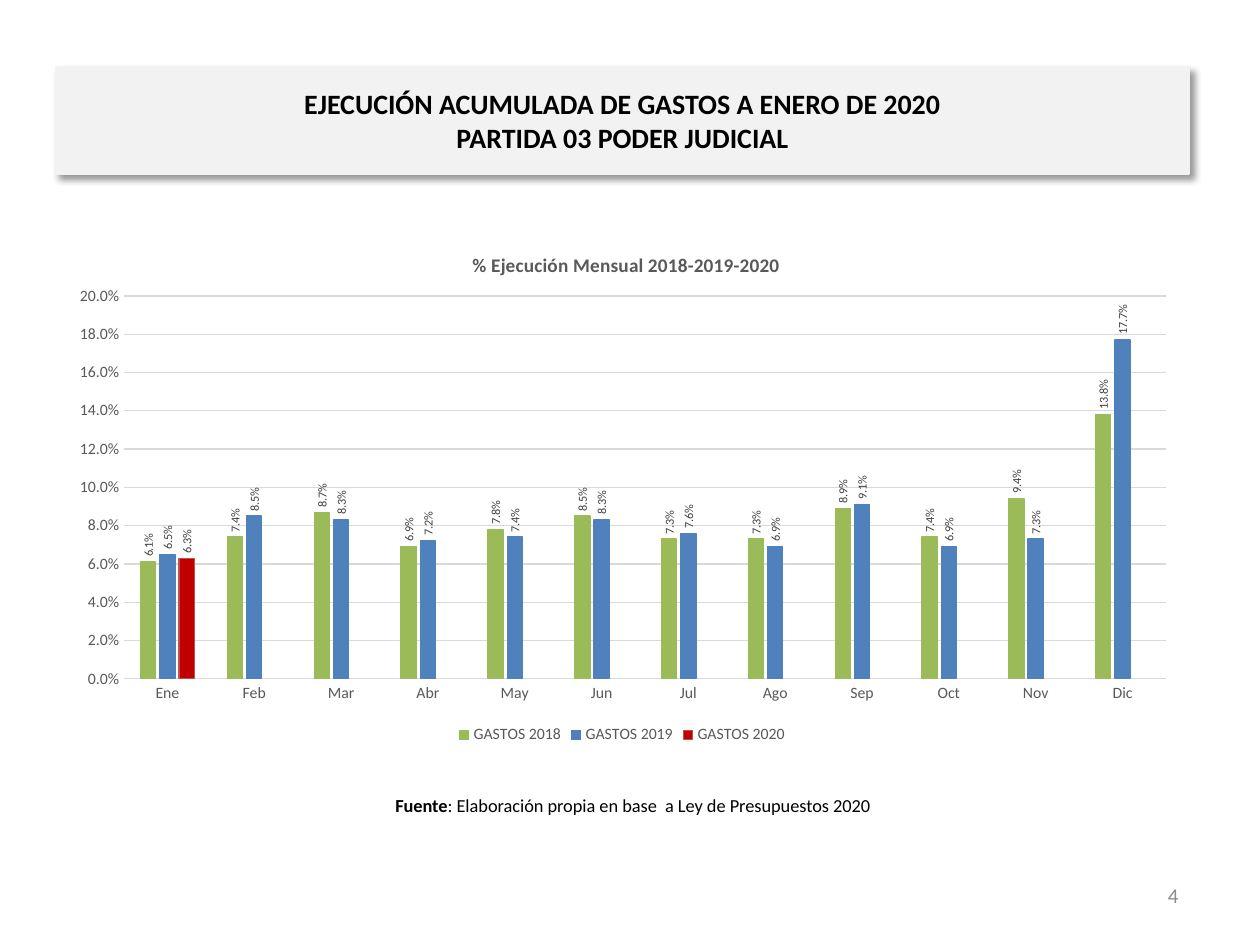
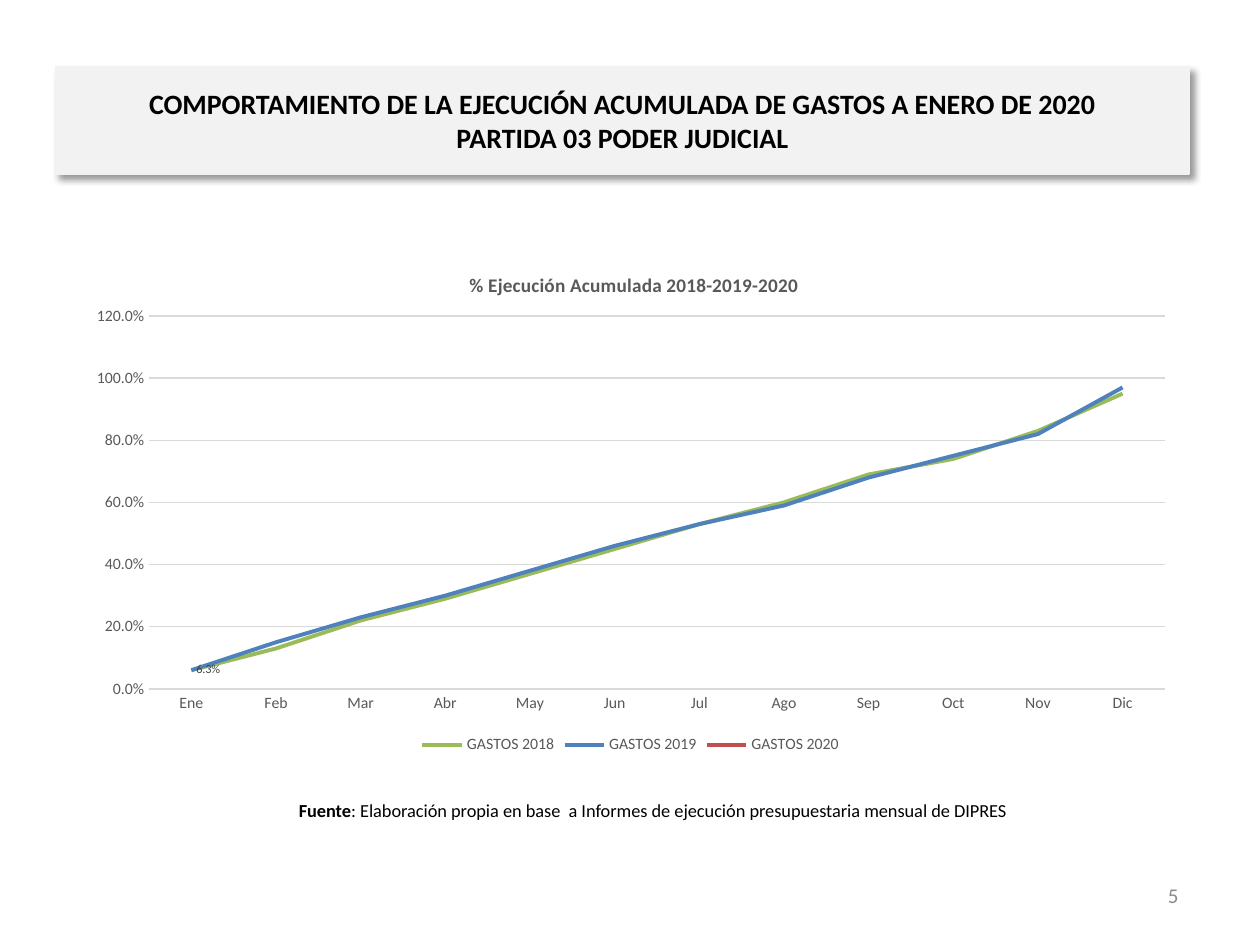
from lxml import etree
from pptx import Presentation
from pptx.chart.data import CategoryChartData
from pptx.dml.color import RGBColor
from pptx.enum.chart import XL_CHART_TYPE as ChartType
from pptx.enum.chart import XL_LABEL_POSITION as LabelPosition
from pptx.enum.chart import XL_LEGEND_POSITION as LegendPosition
from pptx.enum.chart import XL_MARKER_STYLE as MarkerStyle
from pptx.enum.chart import XL_TICK_MARK as TickMark
from pptx.enum.shapes import MSO_SHAPE as Shape
from pptx.enum.text import MSO_ANCHOR as Anchor
from pptx.enum.text import PP_ALIGN as Align
from pptx.oxml import parse_xml
from pptx.oxml.ns import qn
from pptx.util import Pt

EMU_PER_PX = 914400 / 126
FONT = "Calibri"
BLACK, BAND, GRID = "000000", "F2F2F2", "D9D9D9"
GREY_TEXT, LABEL_TEXT, NUMBER_TEXT = "595959", "404040", "8C8C8C"
GREEN, BLUE, RED, DARK_RED = "9BBB59", "4F81BD", "C0504D", "C00000"

PAGE_SIZE = (1260, 945)
BAND_PLACE = (56, 67, 1133, 107)
NUMBER_PLACE = (897, 870, 294, 50)
TITLE_DROP = 24
PERCENT = "0.0%"

MONTHS = ["Ene", "Feb", "Mar", "Abr", "May", "Jun",
          "Jul", "Ago", "Sep", "Oct", "Nov", "Dic"]
SERIES_NAMES = ["GASTOS 2018", "GASTOS 2019", "GASTOS 2020"]
SUBTITLE = "PARTIDA 03 PODER JUDICIAL"

# Places are left, top, width, height in px.
PAGES = [
    {
        "number": "4",
        "title": "EJECUCIÓN ACUMULADA DE GASTOS A ENERO DE 2020",
        "source": ": Elaboración propia en base  a Ley de Presupuestos 2020",
        "source_place": (54, 780, 1158, 50),
        "type": ChartType.COLUMN_CLUSTERED,
        "chart_title": "% Ejecución Mensual 2018-2019-2020",
        "chart_title_left": 469,
        "chart_place": (56, 224, 1132, 525),
        "plot_place": (124, 296, 1042, 383),
        "scale": (0.2, 0.02),
        "values": [
            [0.061, 0.074, 0.087, 0.069, 0.078, 0.085,
             0.073, 0.073, 0.089, 0.074, 0.094, 0.138],
            [0.065, 0.085, 0.083, 0.072, 0.074, 0.083,
             0.076, 0.069, 0.091, 0.069, 0.073, 0.177],
            [0.063],
        ],
    },
    {
        "number": "5",
        "title": "COMPORTAMIENTO DE LA EJECUCIÓN ACUMULADA DE GASTOS A ENERO DE 2020",
        "source": ": Elaboración propia en base  a Informes de ejecución "
                  "presupuestaria mensual de DIPRES",
        "source_place": (74, 785, 1158, 50),
        "type": ChartType.LINE,
        "chart_title": "% Ejecución Acumulada 2018-2019-2020",
        "chart_title_left": 466,
        "chart_place": (74, 244, 1113, 515),
        "plot_place": (149, 316, 1016, 373),
        "scale": (1.2, 0.2),
        "values": [
            [0.06, 0.13, 0.22, 0.29, 0.37, 0.45, 0.53, 0.6, 0.69, 0.74, 0.83, 0.95],
            [0.06, 0.15, 0.23, 0.3, 0.38, 0.46, 0.53, 0.59, 0.68, 0.75, 0.82, 0.97],
            [0.063],
        ],
    },
]


def px(*lengths):
    return [round(length * EMU_PER_PX) for length in lengths]


def color(code):
    return RGBColor.from_string(code)


def set_font(font, size, code, bold=False):
    font.name, font.size, font.bold = FONT, Pt(size), bold
    font.color.rgb = color(code)


def set_line(line, code, width):
    line.color.rgb = color(code)
    line.width = Pt(width)


def add_span(para, text, size, code, bold=False):
    span = para.add_run()
    span.text = text
    set_font(span.font, size, code, bold)


def add_line_of_text(page, place, align):
    """Add a one-paragraph text box and return its paragraph."""
    frame = page.shapes.add_textbox(*px(*place)).text_frame
    frame.word_wrap = True
    frame.vertical_anchor = Anchor.MIDDLE
    para = frame.paragraphs[0]
    para.alignment = align
    return para


def add_band(page, title):
    band = page.shapes.add_shape(Shape.RECTANGLE, *px(*BAND_PLACE))
    band.fill.solid()
    band.fill.fore_color.rgb = color(BAND)
    set_line(band.line, BAND, 0.75)
    band.shadow.inherit = False
    effects = band._element.spPr.find(qn("a:effectLst"))
    shadow = etree.SubElement(effects, qn("a:outerShdw"), blurRad=str(Pt(4)),
                              dist=str(Pt(3)), dir="2700000", algn="tl", rotWithShape="0")
    tint = etree.SubElement(shadow, qn("a:srgbClr"), val=BLACK)
    etree.SubElement(tint, qn("a:alpha"), val="40000")
    frame = band.text_frame
    frame.word_wrap = True
    frame.vertical_anchor = Anchor.MIDDLE
    para = frame.paragraphs[0]
    para.alignment = Align.CENTER
    add_span(para, title, 16, BLACK, True)
    para.add_line_break()
    add_span(para, SUBTITLE, 16, BLACK, True)


def manual_layout(**settings):
    """Build a chart layout element from its settings, in schema order."""
    namespace = "http://schemas.openxmlformats.org/drawingml/2006/chart"
    parts = "".join(f'<c:{name} val="{value}"/>' for name, value in settings.items())
    return parse_xml(f'<c:layout xmlns:c="{namespace}"><c:manualLayout>{parts}'
                     "</c:manualLayout></c:layout>")


def drop_layout(element):
    for old in element.findall(qn("c:layout")):
        element.remove(old)


def place_chart_parts(chart, item):
    """Fix the chart title and the inner plot area inside the chart frame."""
    left, top, width, height = item["chart_place"]
    plot_left, plot_top, plot_width, plot_height = item["plot_place"]
    root = chart._chartSpace.find(qn("c:chart"))
    title = root.find(qn("c:title"))
    drop_layout(title)
    title.find(qn("c:tx")).addnext(manual_layout(
        xMode="edge", yMode="edge",
        x=(item["chart_title_left"] - left) / width, y=TITLE_DROP / height))
    plot_area = root.find(qn("c:plotArea"))
    drop_layout(plot_area)
    plot_area.insert(0, manual_layout(
        layoutTarget="inner", xMode="edge", yMode="edge",
        x=(plot_left - left) / width, y=(plot_top - top) / height,
        w=plot_width / width, h=plot_height / height))


def style_axes(chart, top_value, step):
    for axis in (chart.category_axis, chart.value_axis):
        axis.major_tick_mark = axis.minor_tick_mark = TickMark.NONE
        set_font(axis.tick_labels.font, 9, GREY_TEXT)
    set_line(chart.category_axis.format.line, GRID, 0.75)
    values = chart.value_axis
    values.minimum_scale, values.maximum_scale, values.major_unit = 0, top_value, step
    values.tick_labels.number_format = PERCENT
    values.tick_labels.number_format_is_linked = False
    values.format.line.fill.background()
    set_line(values.major_gridlines.format.line, GRID, 0.75)


def add_labels(series, position):
    labels = series.data_labels
    labels.show_value = True
    labels.number_format = PERCENT
    labels.number_format_is_linked = False
    labels.position = position
    set_font(labels.font, 7, LABEL_TEXT)
    return labels


def style_columns(plot):
    plot.gap_width, plot.overlap = 219, -27
    for series, fill, edge in zip(plot.series, (GREEN, BLUE, DARK_RED), (GREEN, BLUE, RED)):
        series.format.fill.solid()
        series.format.fill.fore_color.rgb = color(fill)
        set_line(series.format.line, edge, 0.75)
        labels = add_labels(series, LabelPosition.OUTSIDE_END)
        body = labels._element.find(qn("c:txPr")).find(qn("a:bodyPr"))
        body.set("rot", "-5400000")
        body.set("vert", "horz")


def style_lines(plot):
    for series, code in zip(plot.series, (GREEN, BLUE, RED)):
        series.smooth = False
        series.marker.style = MarkerStyle.NONE
        set_line(series.format.line, code, 2.25)
    add_labels(plot.series[-1], LabelPosition.RIGHT)


def add_chart(page, item):
    data = CategoryChartData(number_format=PERCENT)
    data.categories = MONTHS
    for name, values in zip(SERIES_NAMES, item["values"]):
        data.add_series(name, values + [None] * (len(MONTHS) - len(values)))
    chart = page.shapes.add_chart(item["type"], *px(*item["chart_place"]), data).chart
    set_font(chart.font, 10, BLACK)
    add_span(chart.chart_title.text_frame.paragraphs[0], item["chart_title"],
             11, GREY_TEXT, True)
    chart.chart_title.include_in_layout = False
    chart.has_legend = True
    chart.legend.position = LegendPosition.BOTTOM
    chart.legend.include_in_layout = False
    set_font(chart.legend.font, 9, GREY_TEXT)
    style_axes(chart, *item["scale"])
    plot = chart.plots[0]
    plot.vary_by_categories = False
    if item["type"] == ChartType.LINE:
        style_lines(plot)
    else:
        style_columns(plot)
    place_chart_parts(chart, item)


def add_page(deck, item):
    page = deck.slides.add_slide(deck.slide_layouts[6])
    number = add_line_of_text(page, NUMBER_PLACE, Align.RIGHT)
    add_span(number, item["number"], 12, NUMBER_TEXT)
    add_band(page, item["title"])
    source = add_line_of_text(page, item["source_place"], Align.CENTER)
    add_span(source, "Fuente", 10.5, BLACK, True)
    add_span(source, item["source"], 10.5, BLACK)
    add_chart(page, item)


def main():
    deck = Presentation()
    deck.slide_width, deck.slide_height = px(*PAGE_SIZE)
    for item in PAGES:
        add_page(deck, item)
    deck.save("out.pptx")


if __name__ == "__main__":
    main()
